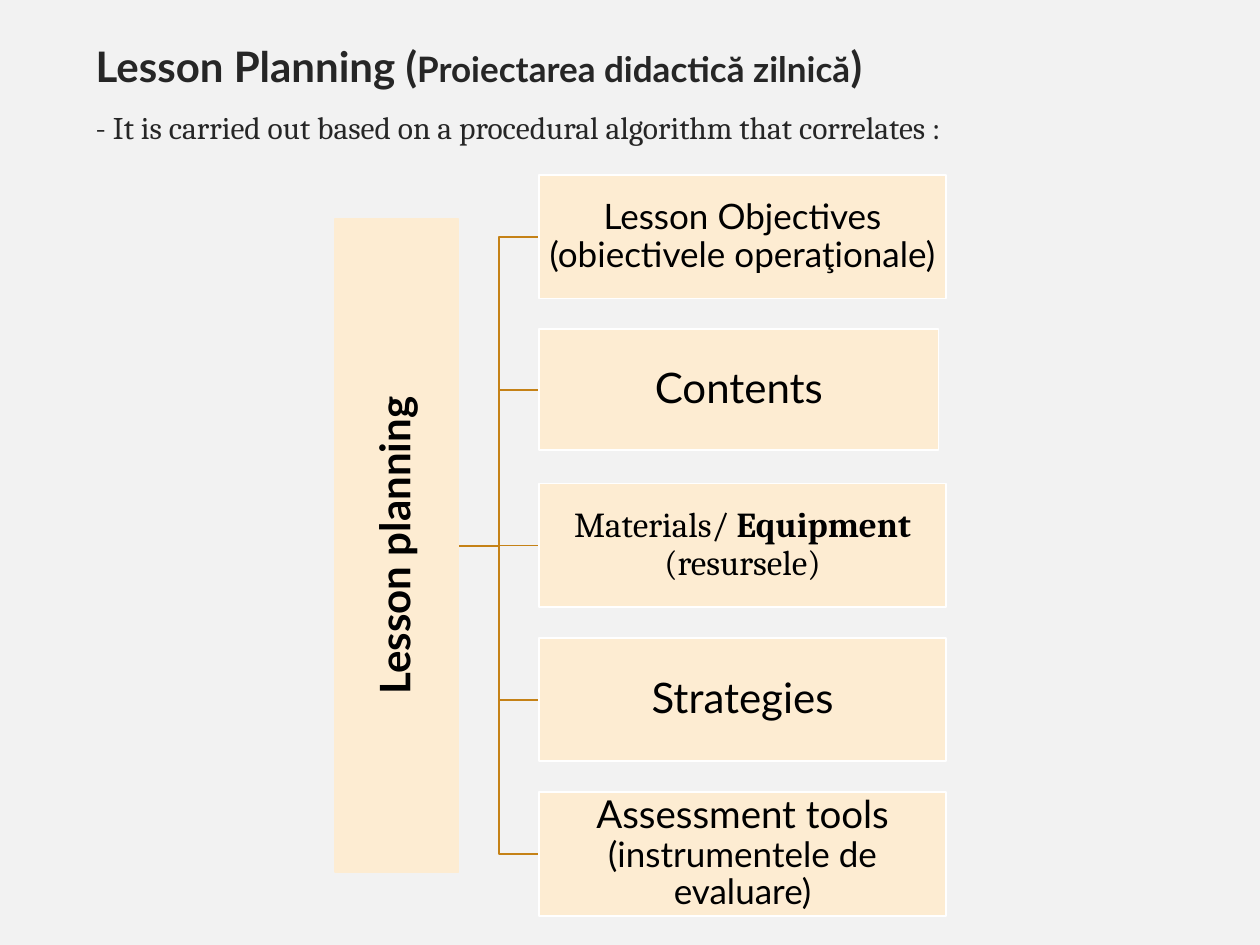
import pptx
import pptx.util
import pptx.dml.color
import pptx.enum.shapes
import pptx.enum.text

Cm = pptx.util.Cm
Pt = pptx.util.Pt
HUES = {"page": "F2F2F2", "head": "262626", "text": "000000",
        "box": "FDECD2", "edge": "FFFFFF", "line": "C58217"}


def tint(name):
    return pptx.dml.color.RGBColor.from_string(HUES[name])


def apply(item, vals):
    for key, val in vals.items():
        setattr(item, key, val)


class Deck:
    face = "Lato"
    width = Pt(1)

    def __init__(self):
        self.file = pptx.Presentation()
        apply(self.file, {"slide_width": Cm(25.4), "slide_height": Cm(19.05)})
        self.slide = self.file.slides.add_slide(self.file.slide_layouts[6])
        fill = self.slide.background.fill
        fill.solid()
        fill.fore_color.rgb = tint("page")

    def words(self, para, runs, hue):
        for text, size, bold, face in runs:
            run = para.add_run()
            run.text = text
            apply(run.font, {"size": Pt(size), "bold": bold, "name": face or self.face})
            run.font.color.rgb = tint(hue)

    def body(self, left, top, wide, high, paras):
        frame = self.slide.shapes.add_textbox(Cm(left), Cm(top), Cm(wide), Cm(high)).text_frame
        frame.word_wrap = True
        for num, runs in enumerate(paras):
            para = frame.add_paragraph() if num else frame.paragraphs[0]
            para.space_before = Pt(10 if num else 0)
            self.words(para, runs, "head")

    def stroke(self, shape, hue):
        shape.shadow.inherit = False
        shape.line.color.rgb = tint(hue)
        shape.line.width = self.width

    def box(self, left, top, wide, high, runs, edge="edge", turn=0, inset=0.04):
        kind = pptx.enum.shapes.MSO_SHAPE.RECTANGLE
        shape = self.slide.shapes.add_shape(kind, Cm(left), Cm(top), Cm(wide), Cm(high))
        shape.rotation = turn
        shape.fill.solid()
        shape.fill.fore_color.rgb = tint("box")
        self.stroke(shape, edge)
        frame = shape.text_frame
        apply(frame, {"word_wrap": True,
                      "vertical_anchor": pptx.enum.text.MSO_ANCHOR.MIDDLE})
        apply(frame, {"margin_" + side: Cm(inset)
                      for side in ("left", "top", "right", "bottom")})
        para = frame.paragraphs[0]
        apply(para, {"alignment": pptx.enum.text.PP_ALIGN.CENTER, "line_spacing": 0.9})
        self.words(para, runs, "text")

    def branch(self, start, end):
        mid = (start[0] + end[0]) / 2
        pen = self.slide.shapes.build_freeform(Cm(start[0]), Cm(start[1]))
        pen.add_line_segments([(Cm(x), Cm(y)) for x, y in
                               ((mid, start[1]), (mid, end[1]), end)], close=False)
        shape = pen.convert_to_shape()
        shape.fill.background()
        self.stroke(shape, "line")


def main():
    deck = Deck()
    deck.body(1.68, 0.69, 24.23, 17.91, [
        [("Lesson Planning (", 24, True, None),
         ("Proiectarea didactică zilnică", 20, True, None),
         (")", 24, True, None)],
        [("- It is carried out based on a procedural algorithm that correlates :",
          18, False, "Cambria")]])

    left, top, step = 10.87, 3.53, 3.11
    full, small = (8.2, 2.49), (8.05, 2.44)
    parts = [
        (full, 0.03, [("Lesson Objectives (obiectivele operaţionale)", 20, False, None)]),
        (small, 0.04, [("Contents", 24, False, None)]),
        (full, 0.03, [("Materials/ ", 20, False, "Cambria"),
                      ("Equipment ", 20, True, "Cambria"),
                      ("(resursele)", 20, False, "Cambria")]),
        (full, 0.04, [("Strategies", 24, False, None)]),
        (full, 0.04, [("Assessment tools ", 22, False, None),
                      ("(instrumentele de evaluare)", 20, False, None)])]

    for row, (size, inset, runs) in enumerate(parts):
        deck.branch((9.25, 11), (left, top + row * step + size[1] / 2))
    deck.box(1.42, 9.75, 13.16, 2.49, [("Lesson planning", 24, True, None)],
             edge="box", turn=270)
    for row, (size, inset, runs) in enumerate(parts):
        deck.box(left, top + row * step, *size, runs, inset=inset)
    deck.file.save("out.pptx")


if __name__ == "__main__":
    main()
